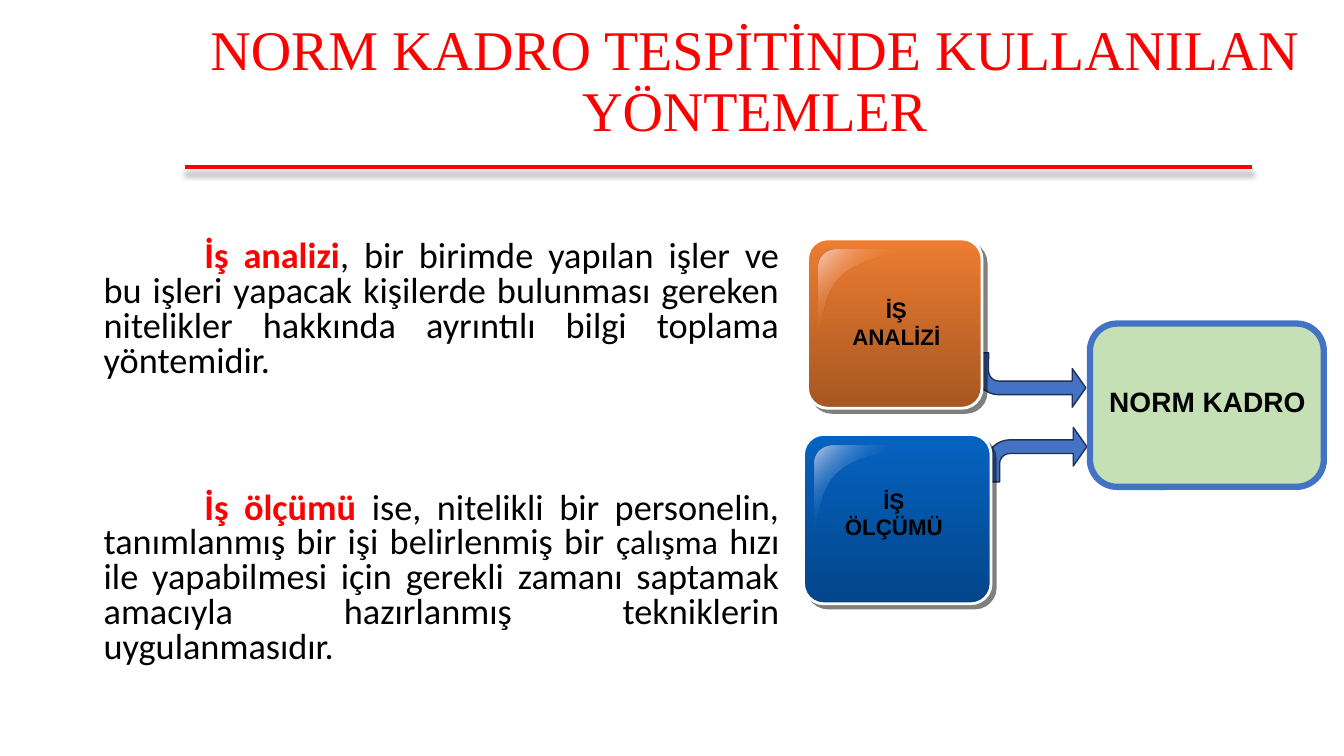
from lxml import etree
from pptx import Presentation, util as u
from pptx.dml.color import RGBColor
from pptx.enum import shapes, text
from pptx.oxml.ns import qn

INK = {"red": "FF0000", "black": "000000", "white": "FFFFFF",
       "blue": "4472C4", "navy": "1E3256", "green": "C5E0B4"}
# Top, bottom and gloss colour of each tile
TILE = {"orange": ("ED7D31", "A65722", "F6CDC1"),
        "azure": ("0563C1", "03458A", "BFC8E4")}
PX = 9144  # 100 px to the inch


def rgb(name):
    return RGBColor.from_string(INK.get(name, name))


def curve(a, b, c, d, steps=16):
    """Points along a Bezier curve."""
    for i in range(steps + 1):
        t = i / steps
        s = 1 - t
        yield tuple(s**3 * p + 3 * s * s * t * q + 3 * s * t * t * r + t**3 * v
                    for p, q, r, v in zip(a, b, c, d))


# Outline of a tile's gloss, as shares of its width and height
GLOSS = [*curve((.2, 0), (.09, 0), (0, .09), (0, .2)),
         *curve((0, .98), (.05, 1), (.02, .52), (.27, .3)),
         *curve((.27, .3), (.52, .07), (1.02, .05), (.99, 0))]


class Board:
    def __init__(self, deck):
        self.slide = deck.slides.add_slide(deck.slide_layouts[5])
        self.shapes = self.slide.shapes

    def effect(self, parent, blur=0, dist=0, turn=0, alpha=0):
        """Add an effect list; it holds a shadow if alpha is given."""
        box = etree.SubElement(parent, qn("a:effectLst"))
        if alpha:
            glow = etree.SubElement(
                box, qn("a:outerShdw"), blurRad=str(u.Pt(blur)),
                dist=str(u.Pt(dist)), dir=str(turn * 60000),
                algn="ctr", rotWithShape="0")
            ink = etree.SubElement(glow, qn("a:srgbClr"), val=INK["black"])
            etree.SubElement(ink, qn("a:alpha"), val=str(alpha * 1000))
        return box

    def frame(self, shape, **form):
        base = {"word_wrap": True, "auto_size": text.MSO_AUTO_SIZE.NONE}
        for key, val in {**base, **form}.items():
            setattr(shape.text_frame, key, val)
        return shape.text_frame

    def run(self, para, words, ink="black", **form):
        run = para.add_run()
        run.text = words
        for key, val in form.items():
            setattr(run.font, key, u.Pt(val) if key == "size" else val)
        run.font.color.rgb = rgb(ink)
        return run

    def para(self, para, **form):
        for key, val in form.items():
            setattr(para, key, val)
        return para

    def title(self, words, *box):
        head = self.shapes.title
        head.left, head.top, head.width, head.height = (n * PX for n in box)
        body = self.frame(head, vertical_anchor=text.MSO_ANCHOR.MIDDLE)
        para = self.para(body.paragraphs[0], line_spacing=.9,
                         alignment=text.PP_ALIGN.CENTER)
        self.run(para, words, "red", size=40, name="Times New Roman")

    def rule(self, *ends):
        line = self.shapes.add_connector(
            shapes.MSO_CONNECTOR.STRAIGHT, *(n * PX for n in ends))
        line.line.color.rgb = rgb("red")
        line.line.width = u.Pt(3)
        self.effect(line._element.spPr, 4, 4, 90, 25)

    def shape(self, kind, box, fill, line, width, adjust):
        item = self.shapes.add_shape(kind, *(n * PX for n in box))
        item.shadow.inherit = False
        for i, val in enumerate(adjust):
            item.adjustments[i] = val
        if fill:
            item.fill.solid()
            item.fill.fore_color.rgb = rgb(fill)
        item.line.color.rgb = rgb(line)
        item.line.width = u.Pt(width)
        return item

    def arrow(self, *box, flip=False):
        item = self.shape(shapes.MSO_SHAPE.BENT_ARROW, box, "blue", "navy", 1,
                          (.25, .355, .25, .438))
        if flip:
            item._element.spPr.find(qn("a:xfrm")).set("flipV", "1")

    def blend(self, item, turn, *stops):
        item.fill.gradient()
        item.fill.gradient_angle = 360 - turn
        for stop, (at, ink) in zip(item.fill.gradient_stops, stops):
            stop.position = at
            stop.color.rgb = rgb(ink)

    def tile(self, tone, x, y, w, h):
        top, low, shine = TILE[tone]
        item = self.shape(shapes.MSO_SHAPE.ROUNDED_RECTANGLE, (x, y, w, h),
                          None, "white", 2, (.119,))
        self.blend(item, 90, (0, top), (1, low))
        props = item._element.spPr
        props.remove(props.find(qn("a:effectLst")))
        self.effect(props, 0, 4.2, 45, 50)
        # Gloss over the upper left quarter
        spots = [(round((x + 11 + a * w / 2) * PX),
                  round((y + 11 + b * h / 2) * PX)) for a, b in GLOSS]
        pen = self.shapes.build_freeform(*spots[0])
        pen.add_line_segments(spots[1:], close=True)
        gloss = pen.convert_to_shape()
        gloss.shadow.inherit = False
        self.blend(gloss, 45, (0, shine), (.5, top))
        clear = list(gloss._element.spPr.iter(qn("a:srgbClr")))[1]
        etree.SubElement(clear, qn("a:alpha"), val="0")
        gloss.line.fill.background()

    def label(self, words, size, *box, shade=False):
        item = self.shapes.add_textbox(*(n * PX for n in box))
        para = self.para(self.frame(item).paragraphs[0],
                         alignment=text.PP_ALIGN.CENTER)
        run = self.run(para, words, size=size, name="Arial", bold=True)
        if shade:
            props = run.font._element
            props.find(qn("a:solidFill")).addnext(
                self.effect(props, 0, 2, 45, 50))

    def prose(self, paras, gap, *box):
        body = self.frame(self.shapes.add_textbox(*(n * PX for n in box)))
        for i, runs in enumerate(paras):
            para = body.add_paragraph() if i else body.paragraphs[0]
            para._p.get_or_add_pPr().set("indent", str(100 * PX))
            self.para(para, alignment=text.PP_ALIGN.JUSTIFY, line_spacing=.8,
                      space_before=u.Pt(gap if i else 0))
            for words, form in runs:
                self.run(para, words,
                         **{"size": 25.9, "name": "Calibri", **form})


def main():
    deck = Presentation()
    deck.slide_width, deck.slide_height = 1333 * PX, 750 * PX
    board = Board(deck)

    # Heading
    board.rule(1242, 166, 184, 166)
    board.title("NORM KADRO TESPİTİNDE KULLANILAN YÖNTEMLER",
                184, 23, 1129, 118)

    # Definitions
    key = {"ink": "red", "bold": True}
    board.prose([
        [("İş analizi", key),
         (", bir birimde yapılan işler ve bu işleri yapacak kişilerde "
          "bulunması gereken nitelikler hakkında ayrıntılı bilgi toplama "
          "yöntemidir.", {})],
        [("İş ölçümü ", key),
         ("ise, nitelikli bir personelin, tanımlanmış bir işi belirlenmiş "
          "bir ", {}),
         ("çalışma", {"size": 24.1}),
         (" hızı ile yapabilmesi için gerekli zamanı saptamak amacıyla "
          "hazırlanmış tekniklerin uygulanmasıdır.", {})],
    ], 80, 93, 234, 690, 434)

    # Two methods leading to the norm staff
    board.arrow(967, 350, 110, 54, flip=True)
    board.arrow(978, 424, 100, 54)
    board.tile("orange", 801, 237, 173, 168)
    board.tile("azure", 797, 431, 186, 168)
    board.label("İŞ ÖLÇÜMÜ", 16, 819, 478, 135, 64, shade=True)
    board.label("İŞ ANALİZİ", 16, 830, 289, 118, 64, shade=True)
    board.shape(shapes.MSO_SHAPE.ROUNDED_RECTANGLE, (1081, 321, 232, 162),
                "green", "blue", 4.5, (.167,))
    board.label("NORM KADRO", 20, 1090, 377, 215, 44)

    deck.save("out.pptx")


if __name__ == "__main__":
    main()
